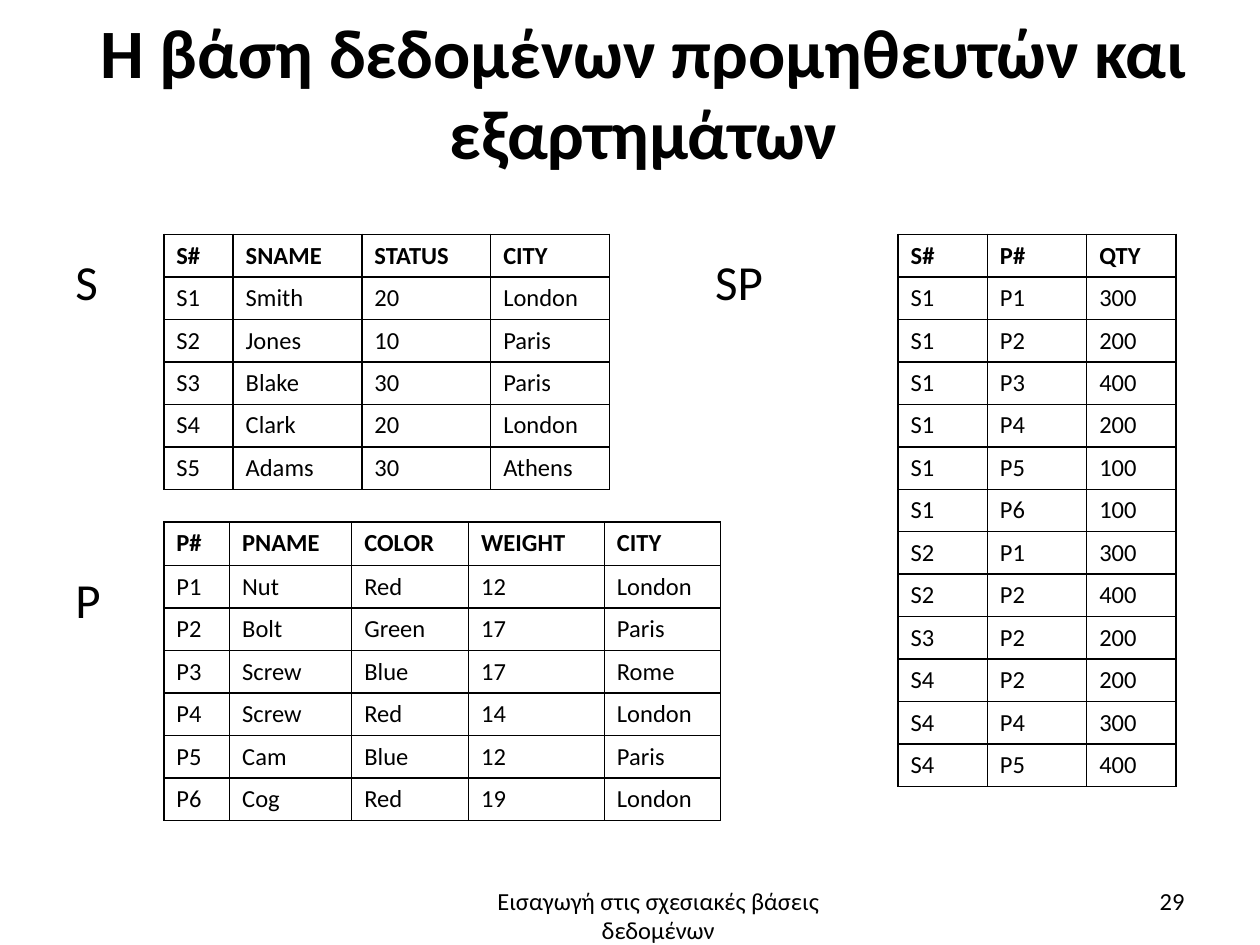
from lxml import etree
from pptx import Presentation
from pptx.dml.color import RGBColor
from pptx.enum.text import MSO_ANCHOR, MSO_AUTO_SIZE, PP_ALIGN
from pptx.oxml.ns import qn
from pptx.util import Pt

LEFT, MID, RIGHT = PP_ALIGN.LEFT, PP_ALIGN.CENTER, PP_ALIGN.RIGHT
TOP, CENTER = MSO_ANCHOR.TOP, MSO_ANCHOR.MIDDLE
FIXED = MSO_AUTO_SIZE.NONE

THEME = {
    "font": "Calibri", "ink": "000000", "border": 1,
    "title": 39.6, "label": 28, "body": 14,
}
ROW = 24.25

TITLE = "Η βάση δεδομένων προμηθευτών και εξαρτημάτων"
TABLES = [
    {"at": (93.6, 134), "cols": (39.6, 73.6, 73.6, 68), "head": ROW, "rows": [
        ("S#", "SNAME", "STATUS", "CITY"),
        ("S1", "Smith", "20", "London"),
        ("S2", "Jones", "10", "Paris"),
        ("S3", "Blake", "30", "Paris"),
        ("S4", "Clark", "20", "London"),
        ("S5", "Adams", "30", "Athens"),
    ]},
    {"at": (93.6, 298.2), "cols": (37.6, 69.8, 66.8, 77.6, 66.4), "head": 25, "rows": [
        ("P#", "PNAME", "COLOR", "WEIGHT", "CITY"),
        ("P1", "Nut", "Red", "12", "London"),
        ("P2", "Bolt", "Green", "17", "Paris"),
        ("P3", "Screw", "Blue", "17", "Rome"),
        ("P4", "Screw", "Red", "14", "London"),
        ("P5", "Cam", "Blue", "12", "Paris"),
        ("P6", "Cog", "Red", "19", "London"),
    ]},
    {"at": (513.2, 134), "cols": (51, 56.8, 51), "head": ROW, "rows": [
        ("S#", "P#", "QTY"),
        ("S1", "P1", "300"),
        ("S1", "P2", "200"),
        ("S1", "P3", "400"),
        ("S1", "P4", "200"),
        ("S1", "P5", "100"),
        ("S1", "P6", "100"),
        ("S2", "P1", "300"),
        ("S2", "P2", "400"),
        ("S3", "P2", "200"),
        ("S4", "P2", "200"),
        ("S4", "P4", "300"),
        ("S4", "P5", "400"),
    ]},
]
# Wording, box, type size, alignment, anchor
TEXTS = [
    ("S", (36, 140, 50, 42), "label", LEFT, TOP),
    ("SP", (401.6, 140, 60, 42), "label", LEFT, TOP),
    ("P", (36, 322, 50, 42), "label", LEFT, TOP),
    ("Εισαγωγή στις σχεσιακές βάσεις δεδομένων",
     (250.6, 502.5, 251.2, 37.5), "body", MID, TOP),
    ("29", (516.2, 500.4, 167.8, 28.8), "body", RIGHT, CENTER),
]


def assign(item, values):
    for name, value in values.items():
        setattr(item, name, value)


def write(frame, text, size, bold=False, **layout):
    """Fill a text frame with one formatted paragraph."""
    frame.text = text
    para = frame.paragraphs[0]
    assign(para, layout)
    font = para.runs[0].font
    assign(font, {"name": THEME["font"], "size": Pt(THEME[size]), "bold": bold})
    font.color.rgb = RGBColor.from_string(THEME["ink"])


def outline(cell):
    """Draw all four borders of a cell and leave it unfilled."""
    props = cell._tc.get_or_add_tcPr()
    for side in ("lnL", "lnR", "lnT", "lnB"):
        line = etree.SubElement(props, qn("a:" + side), w=str(Pt(THEME["border"])))
        fill = etree.SubElement(line, qn("a:solidFill"))
        etree.SubElement(fill, qn("a:srgbClr"), val=THEME["ink"])
    cell.fill.background()


def add_grid(slide, at, cols, head, rows):
    heights = [head] + [ROW] * (len(rows) - 1)
    box = (*at, sum(cols), sum(heights))
    table = slide.shapes.add_table(len(rows), len(cols), *map(Pt, box)).table
    assign(table, {"first_row": False, "horz_banding": False})
    for col, width in zip(table.columns, cols):
        col.width = Pt(width)
    for i, (row, height, words) in enumerate(zip(table.rows, heights, rows)):
        row.height = Pt(height)
        for cell, word in zip(row.cells, words):
            write(cell.text_frame, word, "body", bold=i == 0, alignment=LEFT)
            outline(cell)


def main():
    deck = Presentation()
    assign(deck, {"slide_width": Pt(720), "slide_height": Pt(540)})
    slide = deck.slides.add_slide(deck.slide_layouts[5])

    title = slide.shapes.title
    assign(title, {"left": Pt(36), "top": Pt(3.6), "width": Pt(663.8), "height": Pt(99.4)})
    assign(title.text_frame, {
        "margin_left": 0, "margin_right": 0, "margin_top": Pt(1.4), "margin_bottom": 0,
        "vertical_anchor": CENTER, "word_wrap": True, "auto_size": FIXED,
    })
    write(title.text_frame, TITLE, "title", bold=True, alignment=MID, line_spacing=0.98)

    for grid in TABLES:
        add_grid(slide, **grid)
    for text, box, size, align, anchor in TEXTS:
        frame = slide.shapes.add_textbox(*map(Pt, box)).text_frame
        assign(frame, {"word_wrap": True, "auto_size": FIXED, "vertical_anchor": anchor})
        write(frame, text, size, alignment=align)
    deck.save("out.pptx")


if __name__ == "__main__":
    main()
